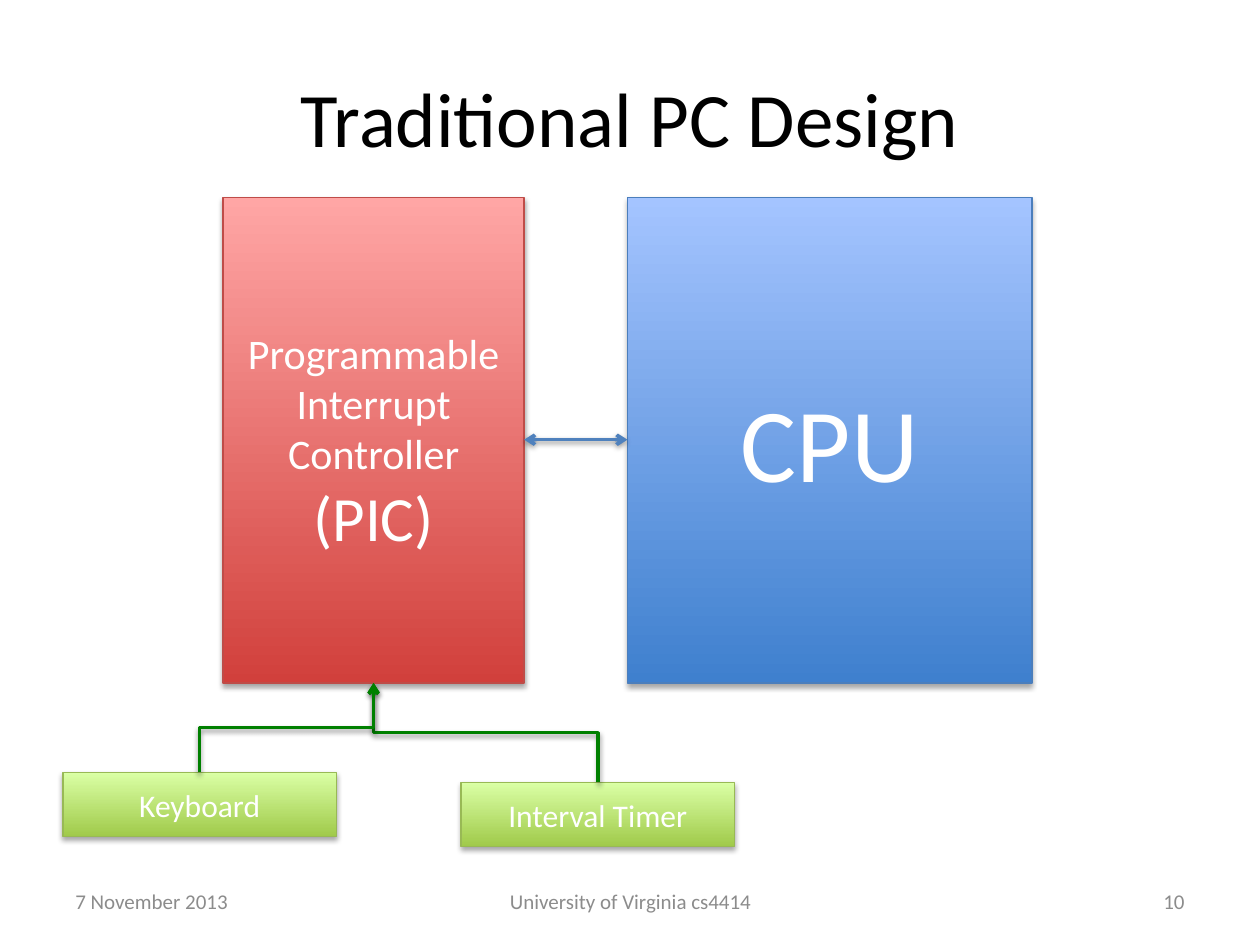
"""Build the slide showing how a traditional PC wires devices to its CPU."""
from dataclasses import dataclass

from lxml import etree
from pptx import Presentation
from pptx import util as u
from pptx.dml.color import RGBColor
from pptx.enum import shapes, text
from pptx.oxml import ns


@dataclass(frozen=True)
class Finish:
    top: str
    bottom: str
    edge: str


@dataclass(frozen=True)
class Theme:
    font: str = "Calibri"
    ink: str = "000000"
    muted: str = "8C8C8C"
    label: str = "FFFFFF"
    bus: str = "4F81BD"
    signal: str = "008000"
    red: Finish = Finish("FFA6A5", "D1403C", "BF4C48")
    blue: Finish = Finish("A4C4FF", "3F80CE", "4B7EBC")
    green: Finish = Finish("DAFFA5", "A0CA4A", "98B955")
    title_size: int = 44
    cpu_size: int = 60
    pic_size: int = 24
    acronym_size: int = 36
    device_size: int = 18
    footer_size: int = 12


@dataclass(frozen=True)
class Line:
    words: str
    size: int


@dataclass(frozen=True)
class Box:
    left: float
    top: float
    width: float
    height: float

    @property
    def right(self) -> float:
        return self.left + self.width

    @property
    def bottom(self) -> float:
        return self.top + self.height

    @property
    def center(self) -> float:
        return self.left + self.width / 2

    def lengths(self) -> list:
        return [u.Inches(v) for v in (self.left, self.top, self.width, self.height)]


@dataclass(frozen=True)
class Component:
    box: Box
    finish: Finish
    lines: tuple


@dataclass(frozen=True)
class Caption:
    box: Box
    line: Line
    color: str
    align: text.PP_ALIGN


THEME = Theme()
ALIGN = text.PP_ALIGN
UNIT_TOP, UNIT_HEIGHT = 1.57, 3.85
DEVICE_WIDTH, DEVICE_HEIGHT = 2.17, 0.51
FOOTER_TOP, FOOTER_HEIGHT = 6.95, 0.4
BUS_Y = 3.49

CPU = Component(Box(4.98, UNIT_TOP, 3.21, UNIT_HEIGHT), THEME.blue,
                (Line("CPU", THEME.cpu_size),))
PIC = Component(Box(1.77, UNIT_TOP, 2.39, UNIT_HEIGHT), THEME.red,
                (Line("Programmable Interrupt Controller", THEME.pic_size),
                 Line("(PIC)", THEME.acronym_size)))
DEVICES = tuple(
    Component(Box(left, top, DEVICE_WIDTH, DEVICE_HEIGHT), THEME.green,
              (Line(name, THEME.device_size),))
    for name, left, top in (("Interval Timer", 3.66, 6.21), ("Keyboard", 0.5, 6.13)))
CAPTIONS = (
    Caption(Box(0.5, 0.3, 9, 1.25), Line("Traditional PC Design", THEME.title_size),
            THEME.ink, ALIGN.CENTER),
    *(Caption(Box(left, FOOTER_TOP, width, FOOTER_HEIGHT),
              Line(words, THEME.footer_size), THEME.muted, align)
      for words, left, width, align in (
          ("7 November 2013", 0.5, 2.33, ALIGN.LEFT),
          ("University of Virginia cs4414", 3.42, 3.17, ALIGN.CENTER),
          ("10", 7.17, 2.33, ALIGN.RIGHT))))


def write(frame, lines: tuple, color: str, align: text.PP_ALIGN) -> None:
    frame.word_wrap = True
    frame.vertical_anchor = text.MSO_ANCHOR.MIDDLE
    for index, line in enumerate(lines):
        paragraph = frame.add_paragraph() if index else frame.paragraphs[0]
        paragraph.alignment = align
        run = paragraph.add_run()
        run.text = line.words
        run.font.name = THEME.font
        run.font.size = u.Pt(line.size)
        run.font.color.rgb = RGBColor.from_string(color)


def add_shadow(properties, opacity: int, distance: float) -> None:
    effects = etree.SubElement(properties, ns.qn("a:effectLst"))
    shadow = etree.SubElement(
        effects, ns.qn("a:outerShdw"), blurRad=str(u.Pt(3.1)),
        dist=str(u.Pt(distance)), dir="5400000", rotWithShape="0")
    shade = etree.SubElement(shadow, ns.qn("a:srgbClr"), val="000000")
    etree.SubElement(shade, ns.qn("a:alpha"), val=str(opacity * 1000))


def draw_caption(slide, caption: Caption) -> None:
    holder = slide.shapes.add_textbox(*caption.box.lengths())
    write(holder.text_frame, (caption.line,), caption.color, caption.align)


def draw_component(slide, component: Component) -> None:
    block = slide.shapes.add_shape(shapes.MSO_SHAPE.RECTANGLE, *component.box.lengths())
    finish = component.finish
    block.fill.gradient()
    block.fill.gradient_angle = 90
    for stop, color in zip(block.fill.gradient_stops, (finish.bottom, finish.top)):
        stop.color.rgb = RGBColor.from_string(color)
    block.line.color.rgb = RGBColor.from_string(finish.edge)
    block.line.width = u.Pt(0.75)
    add_shadow(block._element.spPr, 35, 1.8)
    write(block.text_frame, component.lines, THEME.label, ALIGN.CENTER)


def draw_wire(slide, start: tuple, end: tuple, color: str, arrows: tuple,
              upright: bool = False) -> None:
    """Draw an elbow wire; an upright one is laid out sideways, then turned."""
    (x1, y1), (x2, y2) = start, end
    if upright:
        mid_x, mid_y = (x1 + x2) / 2, (y1 + y2) / 2
        half_x, half_y = (x1 - x2) / 2, (y1 - y2) / 2
        x1, y1 = mid_x - half_y, mid_y + half_x
        x2, y2 = mid_x + half_y, mid_y - half_x
    wire = slide.shapes.add_connector(
        shapes.MSO_CONNECTOR.ELBOW, *(u.Inches(v) for v in (x1, y1, x2, y2)))
    properties = wire._element.spPr
    if upright:
        properties.find(ns.qn("a:xfrm")).set("rot", "16200000")
    wire.line.color.rgb = RGBColor.from_string(color)
    wire.line.width = u.Pt(2)
    for arrow in arrows:
        etree.SubElement(properties.find(ns.qn("a:ln")), ns.qn(f"a:{arrow}"), type="arrow")
    add_shadow(properties, 38, 1.6)


def main() -> None:
    deck = Presentation()
    deck.slide_width, deck.slide_height = u.Inches(10), u.Inches(7.5)
    slide = deck.slides.add_slide(deck.slide_layouts[6])
    for caption in CAPTIONS:
        draw_caption(slide, caption)
    for unit in (CPU, PIC):
        draw_component(slide, unit)
    draw_wire(slide, (PIC.box.right, BUS_Y), (CPU.box.left, BUS_Y), THEME.bus,
              ("headEnd", "tailEnd"))
    for device in DEVICES:
        draw_component(slide, device)
        draw_wire(slide, (device.box.center, device.box.top),
                  (PIC.box.center, PIC.box.bottom), THEME.signal, ("tailEnd",),
                  upright=True)
    deck.save("out.pptx")


if __name__ == "__main__":
    main()
